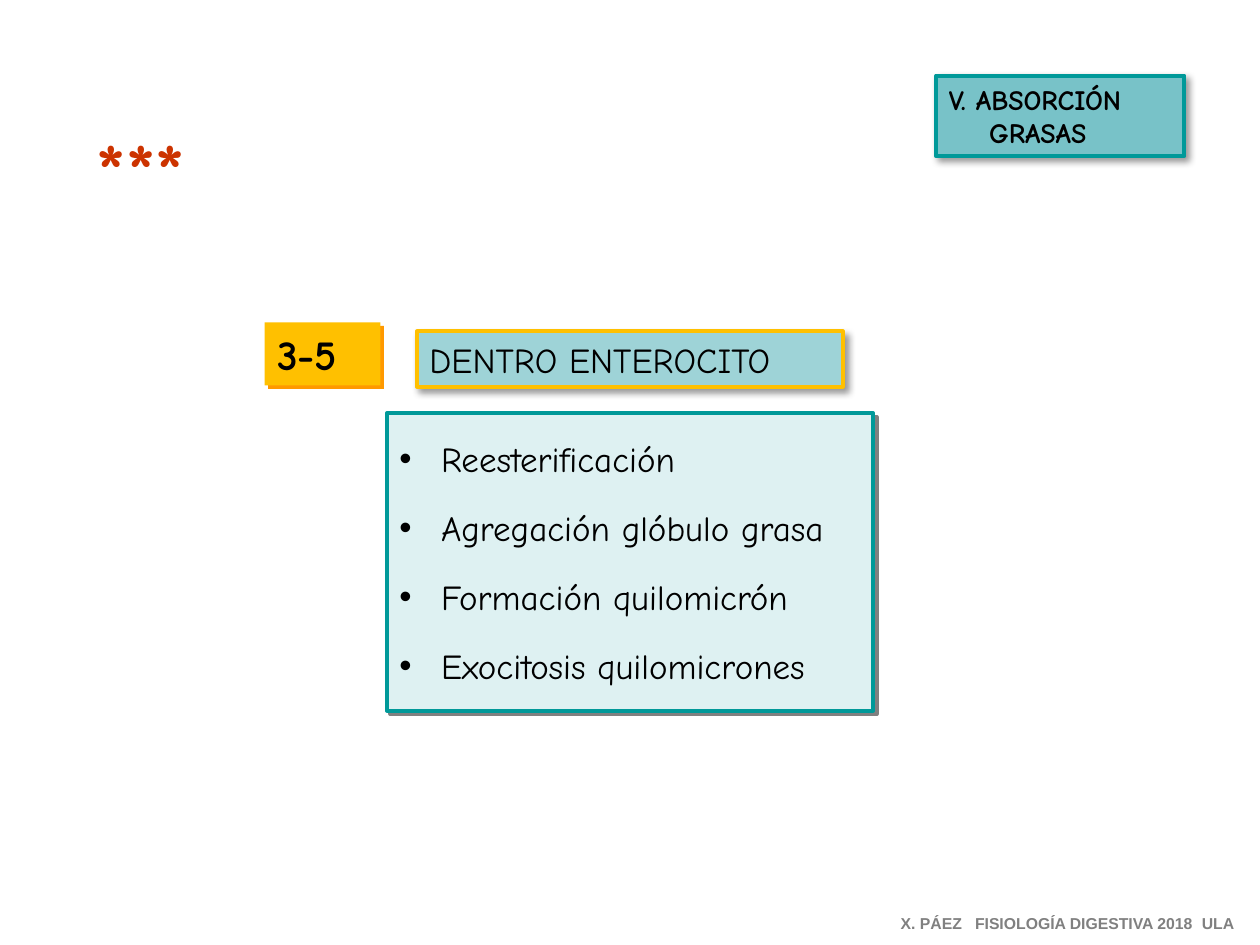
"""Build a slide on the absorption of fats inside the enterocyte."""
from dataclasses import dataclass
from typing import Optional

from lxml.etree import SubElement as Sub
from pptx import Presentation
from pptx.dml.color import RGBColor
from pptx.enum.shapes import MSO_SHAPE as Kind
from pptx.enum.text import MSO_ANCHOR as Anchor, MSO_AUTO_SIZE as Fit, PP_ALIGN as Align
from pptx.oxml.ns import qn
from pptx.util import Inches, Pt

BLACK = RGBColor(0, 0, 0)
GRAY = RGBColor(0x80, 0x80, 0x80)
RED = RGBColor(0xCC, 0x33, 0x00)
TEAL = RGBColor(0x00, 0x99, 0x99)
AQUA = RGBColor(0x78, 0xC2, 0xC8)
SKY = RGBColor(0x9E, 0xD3, 0xD7)
PALE = RGBColor(0xDE, 0xF1, 0xF2)
GOLD = RGBColor(0xFF, 0xC0, 0x00)
AMBER = RGBColor(0xFF, 0x99, 0x00)


@dataclass
class Shade:
    color: RGBColor
    alpha: int = 100
    blur: float = 0
    dist: float = 2.8


@dataclass
class Card:
    box: tuple[float, float, float, float]
    lines: list[str]
    size: float
    bold: bool = False
    color: RGBColor = BLACK
    face: str = "Comic Neue"
    fill: Optional[RGBColor] = None
    edge: Optional[RGBColor] = None
    shade: Optional[Shade] = None
    gap: float = 0


SOFT = Shade(BLACK, 40, 4, 3)
HEAD = Card((7.43, 0.6, 1.97, 0.64), ["V. ABSORCIÓN", "GRASAS"], 16, True,
            fill=AQUA, edge=TEAL, shade=SOFT)
LIST = Card((3.07, 3.28, 3.86, 2.36),
            ["Reesterificación", "Agregación glóbulo grasa",
             "Formación quilomicrón", "Exocitosis quilomicrones"],
            20, fill=PALE, edge=TEAL, shade=Shade(GRAY), gap=15.4)
STARS = Card((0.67, 0.91, 1.18, 0.84), ["***"], 44, True, RED)
STEP = Card((2.1, 2.56, 0.92, 0.5), ["3-5"], 24, True, fill=GOLD, shade=Shade(AMBER))
PLACE = Card((3.31, 2.63, 3.38, 0.44), ["DENTRO ENTEROCITO"], 20,
             fill=SKY, edge=GOLD, shade=SOFT)
FOOT = Card((7.05, 7.2, 2.96, 0.25), ["X. PÁEZ\tFISIOLOGÍA DIGESTIVA 2018\tULA"],
            9, True, GRAY, "Arial")


def cast(effect, shade: Shade) -> None:
    """Add an outer shadow to an effect list."""
    outer = Sub(effect, qn("a:outerShdw"), blurRad=str(Pt(shade.blur)),
                dist=str(Pt(shade.dist)), dir="2700000", algn="tl", rotWithShape="0")
    color = Sub(outer, qn("a:srgbClr"), val=str(shade.color))
    Sub(color, qn("a:alpha"), val=str(shade.alpha * 1000))


def indent(par, left: float, first: float = 0) -> None:
    """Set the left margin and first-line indent of a paragraph."""
    props = par._p.get_or_add_pPr()
    props.set("marL", str(Inches(left)))
    props.set("indent", str(Inches(first)))


def tabs(par, stops: list[float]) -> None:
    """Give a paragraph left tab stops."""
    group = par._p.get_or_add_pPr().makeelement(qn("a:tabLst"))
    par._p.get_or_add_pPr().insert(0, group)
    for stop in stops:
        Sub(group, qn("a:tab"), pos=str(Inches(stop)), algn="l")


def dress(shape, card: Card):
    """Place, paint and letter a shape."""
    shape.left, shape.top, shape.width, shape.height = map(Inches, card.box)
    if card.fill is not None:
        shape.fill.solid()
        shape.fill.fore_color.rgb = card.fill
    if card.edge is not None:
        shape.line.color.rgb = card.edge
        shape.line.width = Pt(2.25)
    else:
        shape.line.fill.background()
    shape.shadow.inherit = False
    if card.shade:
        cast(shape._element.spPr.find(qn("a:effectLst")), card.shade)
    frame = shape.text_frame
    frame.word_wrap = True
    frame.auto_size = Fit.NONE
    frame.vertical_anchor = Anchor.MIDDLE
    frame.text = "\n".join(card.lines)
    for rank, par in enumerate(frame.paragraphs):
        par.alignment = Align.LEFT
        par.space_before = Pt(card.gap if rank else 0)
        font = par.font
        font.name, font.size, font.bold = card.face, Pt(card.size), card.bold
        font.color.rgb = card.color
    return frame.paragraphs


def draw(slide, card: Card):
    """Add a filled rectangle or a plain text box."""
    box = [Inches(side) for side in card.box]
    if card.fill is None:
        shape = slide.shapes.add_textbox(*box)
    else:
        shape = slide.shapes.add_shape(Kind.RECTANGLE, *box)
    return dress(shape, card)


def main() -> None:
    """Build and save the slide."""
    deck = Presentation()
    deck.slide_width, deck.slide_height = Inches(10), Inches(7.5)
    slide = deck.slides.add_slide(deck.slide_layouts[1])
    head = dress(slide.shapes.title, HEAD)
    indent(head[1], 0.32)
    for par in dress(slide.placeholders[1], LIST):
        indent(par, 0.33, -0.33)
    stars = draw(slide, STARS)
    props = stars[0].runs[0]._r.get_or_add_rPr()
    cast(Sub(props, qn("a:effectLst")), Shade(BLACK))
    for card in (STEP, PLACE):
        draw(slide, card)
    foot = draw(slide, FOOT)
    foot[0].space_before = None
    tabs(foot[0], [0.59, 2.39])
    deck.save("out.pptx")


if __name__ == "__main__":
    main()
